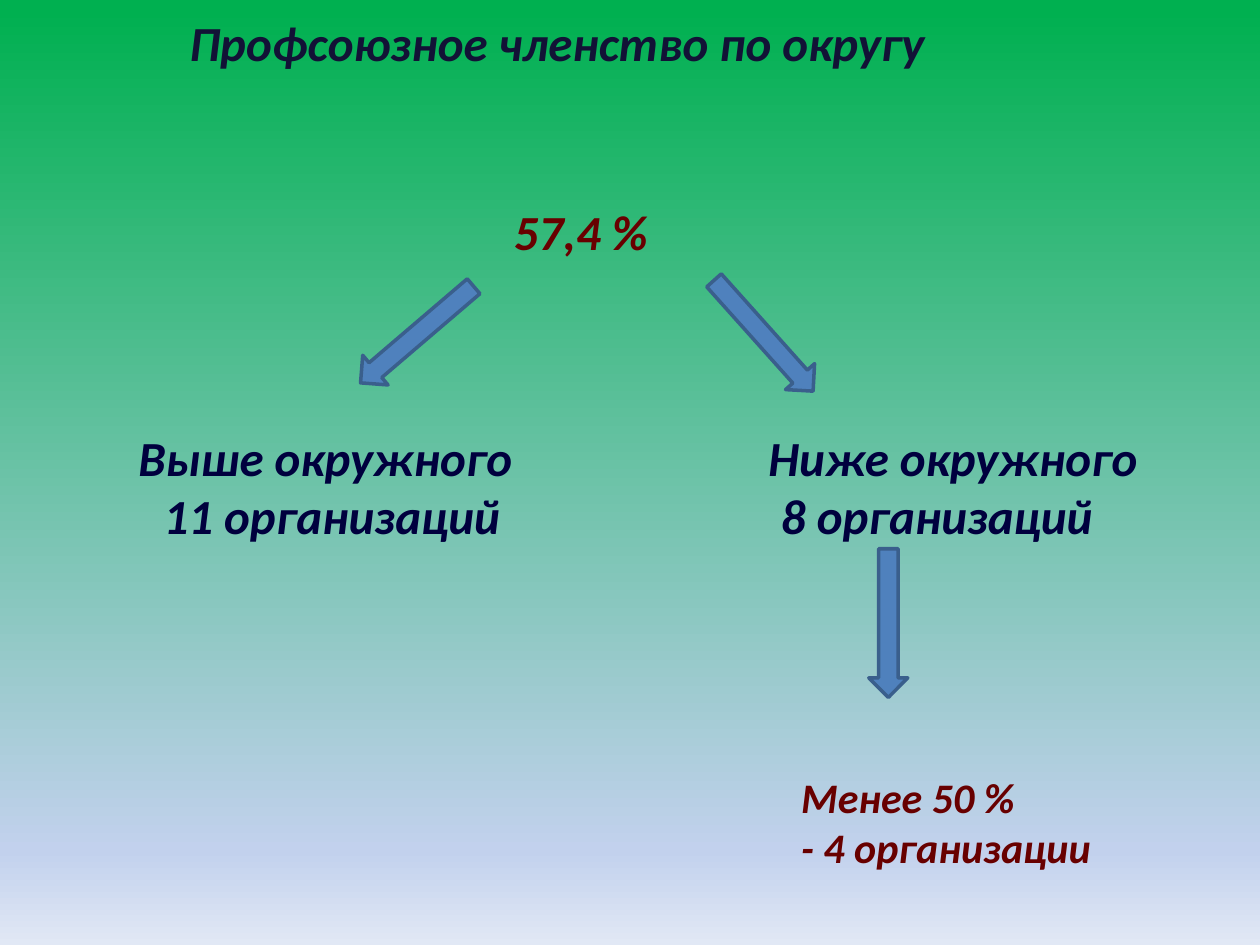
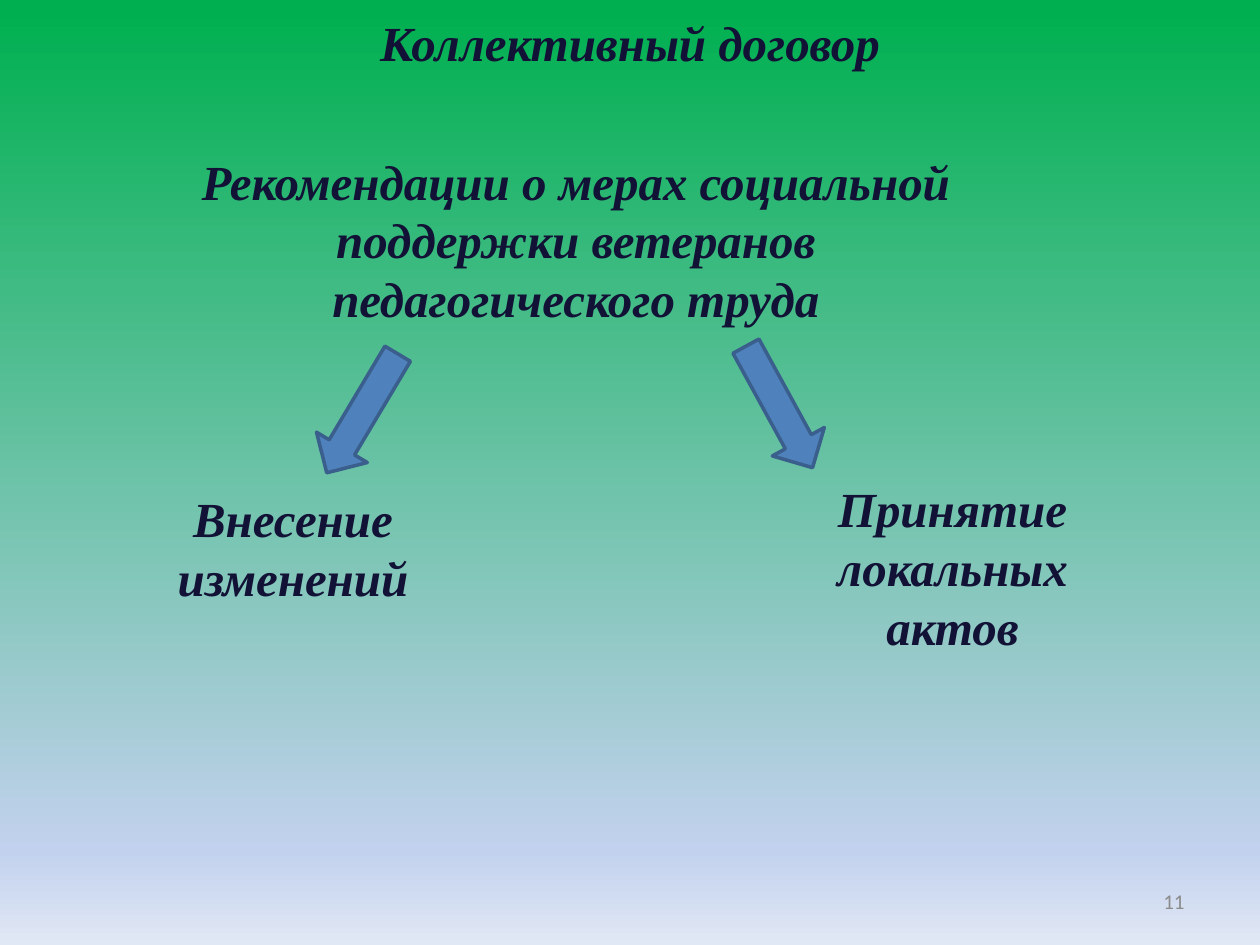
"""Build two slides on union membership and the collective agreement."""
from pptx import Presentation, util as u
from pptx.dml.color import RGBColor
from pptx.enum import shapes, text
from lxml import etree

HUES = {"ink": "121236", "navy": "00003E", "wine": "680000", "grey": "8C8C8C",
        "blue": "4F81BD", "edge": "3A5F8C"}
STOPS = [(1, "00B050"), (90, "C2D1ED"), (100, "E1E8F5")]
SANS, SERIF = "Calibri", "Times New Roman"
MID, LEFT, RIGHT = text.PP_ALIGN.CENTER, text.PP_ALIGN.LEFT, text.PP_ALIGN.RIGHT
TOP, HALF = text.MSO_ANCHOR.TOP, text.MSO_ANCHOR.MIDDLE
COLS = 100

deck = Presentation()
deck.slide_width, deck.slide_height = u.Inches(10), u.Inches(7.5)
cell = deck.slide_width / COLS


def write(page, words, box, font=SERIF, size=28, hue="ink", bold=True,
          align=MID, anchor=TOP, wrap=True, pads=(), head=False):
    """Put words in a box measured in grid cells."""
    spot = [round(n * cell) for n in box]
    if head:
        item = page.shapes.title
        item.left, item.top, item.width, item.height = spot
    else:
        item = page.shapes.add_textbox(*spot)
    frame = item.text_frame
    frame.text = words
    frame.word_wrap = wrap
    frame.auto_size = text.MSO_AUTO_SIZE.NONE
    frame.vertical_anchor = anchor
    for para in frame.paragraphs:
        para.alignment = align
        for run in para.runs:
            face = run.font
            face.name, face.size = font, u.Pt(size)
            face.bold = face.italic = bold
            face.color.rgb = RGBColor.from_string(HUES[hue])
    for para, pad in zip(frame.paragraphs, pads):
        para._p.get_or_add_pPr().set("marL", str(round(pad * cell)))


def point(page, kind, box, turn):
    """Draw a turned block arrow measured in grid cells."""
    arrow = page.shapes.add_shape(kind, *[round(n * cell) for n in box])
    arrow.rotation = turn
    arrow.shadow.inherit = False
    arrow.fill.solid()
    arrow.fill.fore_color.rgb = RGBColor.from_string(HUES["blue"])
    arrow.line.color.rgb = RGBColor.from_string(HUES["edge"])
    arrow.line.width = u.Pt(2)


back = deck.slide_master.background.fill
back.gradient()
back.gradient_angle = 270
ramp = back._fill._gradFill.gsLst
for stop in list(ramp):
    ramp.remove(stop)
for share, tone in STOPS:
    stop = etree.SubElement(ramp, ramp.tag.replace("gsLst", "gs"), pos=str(share * 1000))
    etree.SubElement(stop, ramp.tag.replace("gsLst", "srgbClr"), val=tone)

plain = deck.slide_layouts[5]

page = deck.slides.add_slide(plain)
write(page, "Профсоюзное членство по округу", (0, 0.5, 88.4, 5.7), font=SANS, head=True)
write(page, "57,4 %", (39.8, 15.5, 12.8, 5.7), font=SANS, hue="wine", align=LEFT, wrap=False)
for x, words, pads in [(10, "Выше окружного\n11 организаций", (0, 2)),
                       (60, "Ниже окружного\n8 организаций", (0, 1))]:
    write(page, words, (x, 33.4, 36, 10.4), font=SANS, hue="navy", align=LEFT, pads=pads)
write(page, "Менее 50 %\v- 4 организации", (62.6, 60.7, 27.6, 9.1),
      font=SANS, size=24, hue="wine", align=LEFT)
for x, y, turn in [(54.7, 25.1, 48.2), (27.2, 25, 139.5), (64.6, 47.9, 90)]:
    point(page, shapes.MSO_SHAPE.RIGHT_ARROW, (x, y, 11.8, 3.1), turn)

page = deck.slides.add_slide(plain)
write(page, "Коллективный договор", (0, 0.5, COLS, 5.7), head=True)
write(page, "Рекомендации о мерах социальной поддержки ветеранов педагогического труда",
      (13, 11.5, 65.4, 19.9))
write(page, "Внесение\vизменений", (13, 38.3, 20.5, 10.4))
write(page, "Принятие\vлокальных\vактов", (57.9, 37.5, 35.4, 15.1))
for x, y, turn in [(26.4, 27.3, 30.8), (59.5, 26.8, 331.3)]:
    point(page, shapes.MSO_SHAPE.DOWN_ARROW, (x, y, 4.7, 11), turn)
write(page, "11", (71.7, 69.5, 23.3, 4), font=SANS, size=12, hue="grey",
      bold=False, align=RIGHT, anchor=HALF)

deck.save("out.pptx")
